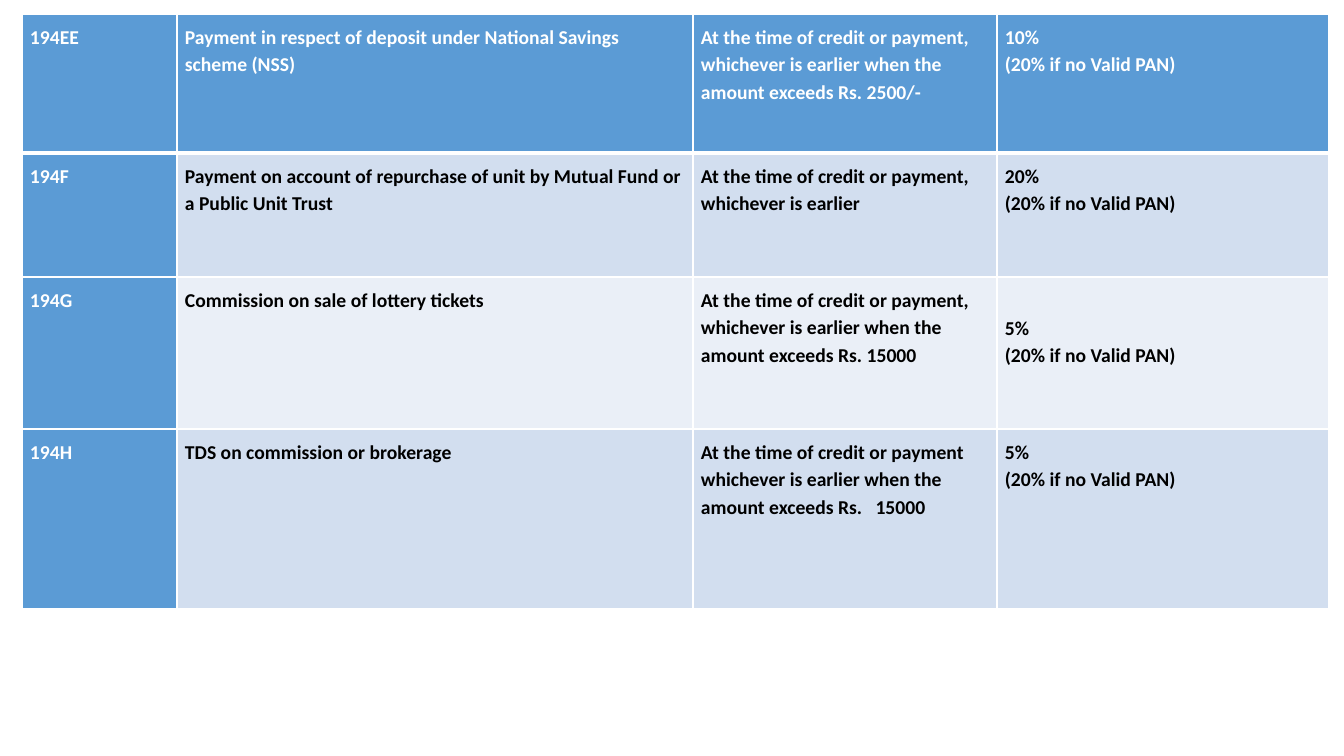
from dataclasses import dataclass

from lxml.etree import SubElement as add_element
from pptx import Presentation
from pptx.dml.color import RGBColor as Color
from pptx.enum.text import MSO_ANCHOR as Anchor, PP_ALIGN as Align
from pptx.oxml.ns import qn
from pptx.util import Emu, Pt


@dataclass(frozen=True)
class Theme:
    font: str = "Calibri"
    size: int = 14
    line_spacing: float = 1.15
    accent: str = "5B9BD5"
    bands: tuple = ("D2DEEF", "EAEFF7")
    light: str = "FFFFFF"
    dark: str = "000000"
    rule: int = 1
    heavy_rule: int = 3


THEME = Theme()
PAGE_SIZE = (1344, 756)
TABLE_BOX = (22, 14, 1307, 595)
COLUMN_WIDTHS = (155, 516, 304, 332)
ROW_HEIGHTS = (139, 124, 152, 180)
PADDING = 8
LINE_HEIGHT = 28
LOWERED_CELL = (2, 3)
NO_PAN = "(20% if no Valid PAN)"
RATES = (
    (
        "194EE",
        "Payment in respect of deposit under National Savings scheme (NSS)",
        "At the time of credit or payment, whichever is earlier when the amount exceeds Rs. 2500/-",
        "10%",
    ),
    (
        "194F",
        "Payment on account of repurchase of unit by Mutual Fund or a Public Unit Trust",
        "At the time of credit or payment, whichever is earlier",
        "20%",
    ),
    (
        "194G",
        "Commission on sale of lottery tickets",
        "At the time of credit or payment, whichever is earlier when the amount exceeds Rs. 15000",
        "5%",
    ),
    (
        "194H",
        "TDS on commission or brokerage",
        "At the time of credit or payment whichever is earlier when the amount exceeds Rs.   15000",
        "5%",
    ),
)


def px(length):
    return Emu(round(length * 914400 / 100.8))


def write_text(para, text, *, color, align=Align.LEFT, bold=True):
    para.alignment = align
    para.line_spacing = THEME.line_spacing
    span = para.add_run()
    span.text = text
    span.font.name = THEME.font
    span.font.size = Pt(THEME.size)
    span.font.bold = bold
    span.font.color.rgb = Color.from_string(color)


def draw_borders(cell, row):
    properties = cell._tc.get_or_add_tcPr()
    widths = {
        "L": THEME.rule,
        "R": THEME.rule,
        "T": THEME.heavy_rule if row == 1 else THEME.rule,
        "B": THEME.heavy_rule if row == 0 else THEME.rule,
    }
    for side, width in widths.items():
        line = add_element(properties, qn(f"a:ln{side}"), w=str(Pt(width)))
        fill = add_element(line, qn("a:solidFill"))
        add_element(fill, qn("a:srgbClr"), val=THEME.light)


def fill_cell(cell, row, column, lines):
    is_heading = row == 0 or column == 0
    draw_borders(cell, row)
    cell.fill.solid()
    background = THEME.accent if is_heading else THEME.bands[(row - 1) % 2]
    cell.fill.fore_color.rgb = Color.from_string(background)
    cell.vertical_anchor = Anchor.TOP
    cell.margin_left = cell.margin_right = cell.margin_bottom = px(PADDING)
    lowered = (row, column) == LOWERED_CELL
    cell.margin_top = px(PADDING + LINE_HEIGHT * lowered)
    frame = cell.text_frame
    for index, text in enumerate(lines):
        para = frame.add_paragraph() if index else frame.paragraphs[0]
        write_text(
            para,
            text,
            color=THEME.light if is_heading else THEME.dark,
            align=Align.JUSTIFY if index else Align.LEFT,
        )


def add_rate_table(page, box):
    size = (len(RATES), len(COLUMN_WIDTHS))
    table = page.shapes.add_table(*size, *map(px, box)).table
    table.horz_banding = False
    for column, width in zip(table.columns, COLUMN_WIDTHS):
        column.width = px(width)
    for row, height in zip(table.rows, ROW_HEIGHTS):
        row.height = px(height)
    for row, (section, nature, timing, rate) in enumerate(RATES):
        entries = ((section,), (nature,), (timing,), (rate, NO_PAN))
        for column, lines in enumerate(entries):
            fill_cell(table.cell(row, column), row, column, lines)


def main():
    deck = Presentation()
    deck.slide_width, deck.slide_height = map(px, PAGE_SIZE)
    page = deck.slides.add_slide(deck.slide_layouts[6])
    add_rate_table(page, TABLE_BOX)
    deck.save("out.pptx")


if __name__ == "__main__":
    main()
